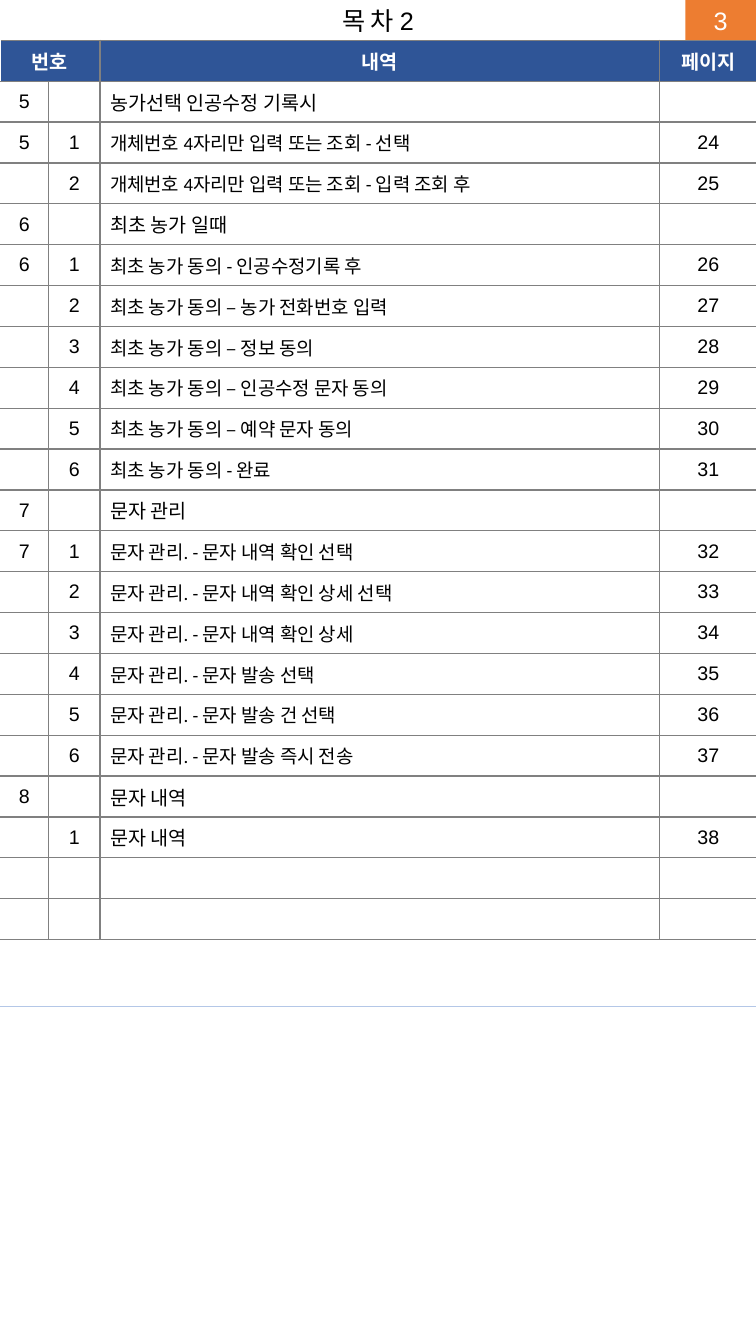
import pptx
import pptx.util
import pptx.oxml
import pptx.oxml.ns
from pptx.dml.color import RGBColor
from pptx.enum.shapes import MSO_CONNECTOR, MSO_SHAPE
from pptx.enum.text import MSO_ANCHOR, MSO_AUTO_SIZE, PP_ALIGN

Pt = pptx.util.Pt

WHITE = RGBColor(0xFF, 0xFF, 0xFF)
BLACK = RGBColor(0x00, 0x00, 0x00)
ORANGE = RGBColor(0xED, 0x7D, 0x31)
NAVY = RGBColor(0x2F, 0x55, 0x97)
PALE_BLUE = RGBColor(0xB4, 0xC7, 0xE7)
GRAY = RGBColor(0x80, 0x80, 0x80)

WIDTH, HEIGHT = 540, 960
BAND_H = 28.8
ROW_H = 29.2
COLUMNS = [34.6, 36.9, 399.6, 69.8]
HEADER = ["번호", "", "내역", "페이지"]
ENTRIES = [
    ("5", "", "농가선택 인공수정 기록시", ""),
    ("5", "1", "개체번호 4자리만 입력 또는 조회 - 선택", "24"),
    ("", "2", "개체번호 4자리만 입력 또는 조회 - 입력 조회 후", "25"),
    ("6", "", "최초 농가 일때", ""),
    ("6", "1", "최초 농가 동의 - 인공수정기록 후", "26"),
    ("", "2", "최초 농가 동의 – 농가 전화번호 입력", "27"),
    ("", "3", "최초 농가 동의 – 정보 동의", "28"),
    ("", "4", "최초 농가 동의 – 인공수정 문자 동의", "29"),
    ("", "5", "최초 농가 동의 – 예약 문자 동의", "30"),
    ("", "6", "최초 농가 동의 - 완료", "31"),
    ("7", "", "문자 관리", ""),
    ("7", "1", "문자 관리. - 문자 내역 확인 선택", "32"),
    ("", "2", "문자 관리. - 문자 내역 확인 상세 선택", "33"),
    ("", "3", "문자 관리. - 문자 내역 확인 상세", "34"),
    ("", "4", "문자 관리. - 문자 발송 선택", "35"),
    ("", "5", "문자 관리. - 문자 발송 건 선택", "36"),
    ("", "6", "문자 관리. - 문자 발송 즉시 전송", "37"),
    ("8", "", "문자 내역", ""),
    ("", "1", "문자 내역", "38"),
    ("", "", "", ""),
    ("", "", "", ""),
]


class Page:
    BASE = {"name": "Arial", "size": Pt(14), "bold": False}
    DETAIL = {"name": "Calibri", "size": Pt(13.5)}

    def __init__(self, prs):
        self.s = prs.slides.add_slide(prs.slide_layouts[5])

    def add_text(self, tf, text, color=BLACK, align=PP_ALIGN.CENTER, **fmt):
        p = tf.paragraphs[0]
        p.alignment = align
        if not text:
            return
        r = p.add_run()
        r.text = text
        for key, value in {**self.BASE, **fmt}.items():
            setattr(r.font, key, value)
        r.font.color.rgb = color

    def title(self, text, x, y, w, h):
        sp = self.s.shapes.title
        place = {"left": x, "top": y, "width": w, "height": h}
        for key, value in place.items():
            setattr(sp, key, Pt(value))
        tf = sp.text_frame
        frame = {"word_wrap": True, "auto_size": MSO_AUTO_SIZE.NONE,
                 "vertical_anchor": MSO_ANCHOR.MIDDLE}
        for key, value in frame.items():
            setattr(tf, key, value)
        self.add_text(tf, text, size=Pt(18))

    def badge(self, text, x, y, w, h):
        sp = self.s.shapes.add_shape(MSO_SHAPE.RECTANGLE, Pt(x), Pt(y), Pt(w), Pt(h))
        sp.shadow.inherit = False
        sp.fill.solid()
        sp.fill.fore_color.rgb = ORANGE
        sp.line.fill.background()
        sp.text_frame.vertical_anchor = MSO_ANCHOR.MIDDLE
        self.add_text(sp.text_frame, text, WHITE, size=Pt(18))

    def rule(self, y):
        line = self.s.shapes.add_connector(
            MSO_CONNECTOR.STRAIGHT, Pt(0), Pt(y), Pt(WIDTH), Pt(y))
        line.line.color.rgb = PALE_BLUE
        line.line.width = Pt(0.5)
        line._element.spPr.append(pptx.oxml.parse_xml(
            f'<a:effectLst {pptx.oxml.ns.nsdecls("a")}/>'))

    def borders(self, cell, sides):
        tcPr = cell._tc.get_or_add_tcPr()
        for side in sides:
            tcPr.append(pptx.oxml.parse_xml(
                f'<a:ln{side} {pptx.oxml.ns.nsdecls("a")} w="{Pt(1)}">'
                f'<a:solidFill><a:srgbClr val="{GRAY}"/></a:solidFill></a:ln{side}>'))

    def contents(self, y):
        rows = [HEADER] + ENTRIES
        table = self.s.shapes.add_table(
            len(rows), len(COLUMNS), Pt(0), Pt(y),
            Pt(sum(COLUMNS)), Pt(ROW_H * len(rows))).table
        table.first_row = table.horz_banding = False
        for column, width in zip(table.columns, COLUMNS):
            column.width = Pt(width)
        last = len(COLUMNS) - 1
        for i, row in enumerate(rows):
            table.rows[i].height = Pt(ROW_H)
            for j, text in enumerate(row):
                cell = table.cell(i, j)
                cell.vertical_anchor = MSO_ANCHOR.MIDDLE
                cell.margin_top = cell.margin_bottom = Pt(0)
                # The table is open at its left and right edges.
                self.borders(cell, "RTB" if j == 0 else "LTB" if j == last else "LRTB")
                if i == 0:
                    cell.fill.solid()
                    cell.fill.fore_color.rgb = NAVY
                    self.add_text(cell.text_frame, text, WHITE, bold=True)
                else:
                    cell.fill.background()
                    detail = j == 2 and (" - " in text or " – " in text)
                    align = PP_ALIGN.LEFT if j == 2 else PP_ALIGN.CENTER
                    self.add_text(cell.text_frame, text, align=align,
                                  **(self.DETAIL if detail else {}))
        table.cell(0, 0).merge(table.cell(0, 1))


def main():
    prs = pptx.Presentation()
    prs.slide_width, prs.slide_height = Pt(WIDTH), Pt(HEIGHT)
    page = Page(prs)
    page.title("목 차 2", 0, 0, WIDTH, BAND_H)
    page.badge("3", 489.6, 0, 50.4, BAND_H)
    for y in (BAND_H, 718.6):
        page.rule(y)
    page.contents(BAND_H)
    prs.save("out.pptx")


if __name__ == "__main__":
    main()
